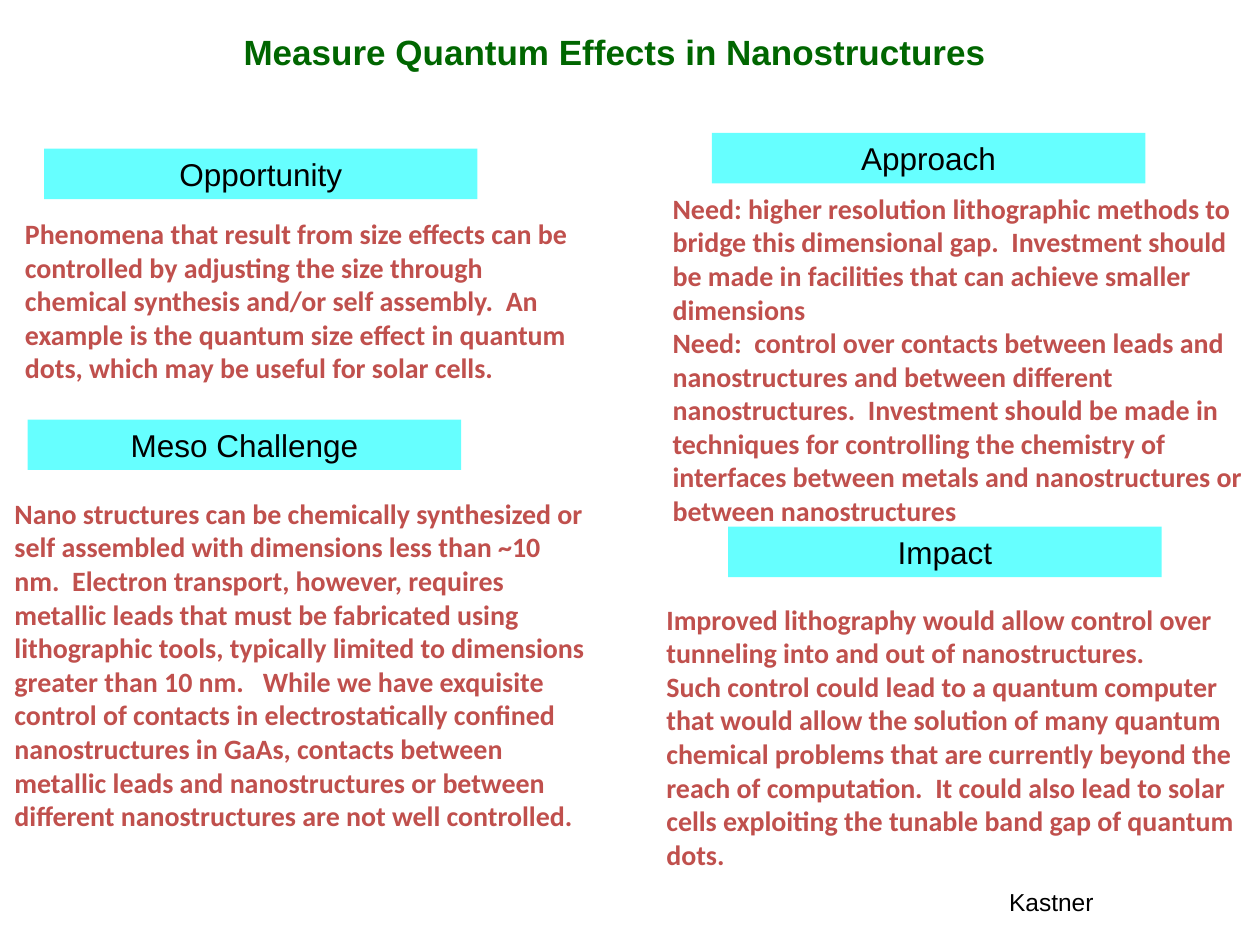
import pptx
import pptx.util
import pptx.dml.color
import pptx.enum.shapes
import pptx.enum.text
from dataclasses import dataclass

Pt = pptx.util.Pt
ALIGN = pptx.enum.text.PP_ALIGN


@dataclass(frozen=True)
class Theme:
    green: str = "006600"
    cyan: str = "66FFFF"
    red: str = "C0504D"
    black: str = "000000"
    sans: str = "Arial"
    body: str = "Calibri"
    title: int = 20
    head: int = 18
    text: int = 16
    name: int = 14


THEME = Theme()
TITLE = "Measure Quantum Effects in Nanostructures"
AUTHOR = "Kastner"
BAR_SIZE = (247.7, 28.8)

PANELS = [
    ("Opportunity", (25.2, 85), (7.2, 120.2, 335.5, 104.4), [
        "Phenomena that result from size effects can be controlled by adjusting the size through chemical synthesis and/or self assembly.  An example is the quantum size effect in quantum dots, which may be useful for solar cells.",
    ]),
    ("Meso Challenge", (15.85, 239.8), (1.2, 280.1, 342, 200.9), [
        "Nano structures can be chemically synthesized or self assembled with dimensions less than ~10 nm.  Electron transport, however, requires metallic leads that must be fabricated using lithographic tools, typically limited to dimensions greater than 10 nm.   While we have exquisite control of contacts in electrostatically confined nanostructures in GaAs, contacts between metallic leads and nanostructures or between different nanostructures are not well controlled.",
    ]),
    ("Approach", (406.8, 76), (377.3, 105.8, 342.7, 200.9), [
        "Need: higher resolution lithographic methods to bridge this dimensional gap.  Investment should be made in facilities that can achieve smaller dimensions",
        "Need:  control over contacts between leads and nanostructures and between different nanostructures.  Investment should be made in techniques for controlling the chemistry of interfaces between metals and nanostructures or between nanostructures",
    ]),
    ("Impact", (416.15, 301), (373.7, 340.6, 346.3, 162.7), [
        "Improved lithography would allow control over tunneling into and out of nanostructures.",
        "Such control could lead to a quantum computer that would allow the solution of many quantum chemical problems that are currently beyond the reach of computation.  It could also lead to solar cells exploiting the tunable band gap of quantum dots.",
    ]),
]


def color(code):
    return pptx.dml.color.RGBColor.from_string(code)


def write(shape, lines, size, face, code, bold=False, align=ALIGN.LEFT, wrap=True,
          anchor=pptx.enum.text.MSO_ANCHOR.TOP):
    frame = shape.text_frame
    frame.word_wrap = wrap
    frame.auto_size = pptx.enum.text.MSO_AUTO_SIZE.NONE
    frame.vertical_anchor = anchor
    frame.text = "\n".join(lines)
    for para in frame.paragraphs:
        para.alignment = align
        para.font.size = Pt(size)
        para.font.name = face
        para.font.bold = bold
        para.font.color.rgb = color(code)


def add_title(slide):
    title = slide.shapes.title
    title.left, title.top, title.width, title.height = map(Pt, (22.3, 13.7, 658, 31.7))
    write(title, [TITLE], THEME.title, THEME.sans, THEME.green, True, ALIGN.CENTER)


def add_bar(slide, label, place):
    bar = slide.shapes.add_shape(pptx.enum.shapes.MSO_SHAPE.RECTANGLE,
                                 *map(Pt, place + BAR_SIZE))
    bar.shadow.inherit = False
    bar.fill.solid()
    bar.fill.fore_color.rgb = color(THEME.cyan)
    bar.line.fill.background()
    write(bar, [label], THEME.head, THEME.sans, THEME.black, align=ALIGN.CENTER,
          anchor=pptx.enum.text.MSO_ANCHOR.MIDDLE)


def main():
    deck = pptx.Presentation()
    deck.slide_width, deck.slide_height = Pt(720), Pt(540)
    slide = deck.slides.add_slide(deck.slide_layouts[5])
    add_title(slide)
    for label, place, area, lines in PANELS:
        add_bar(slide, label, place)
        box = slide.shapes.add_textbox(*map(Pt, area))
        write(box, lines, THEME.text, THEME.body, THEME.red, True)
    name = slide.shapes.add_textbox(*map(Pt, (569.5, 503.3, 63.4, 24.5)))
    write(name, [AUTHOR], THEME.name, THEME.sans, THEME.black, wrap=False)
    deck.save("out.pptx")


if __name__ == "__main__":
    main()
